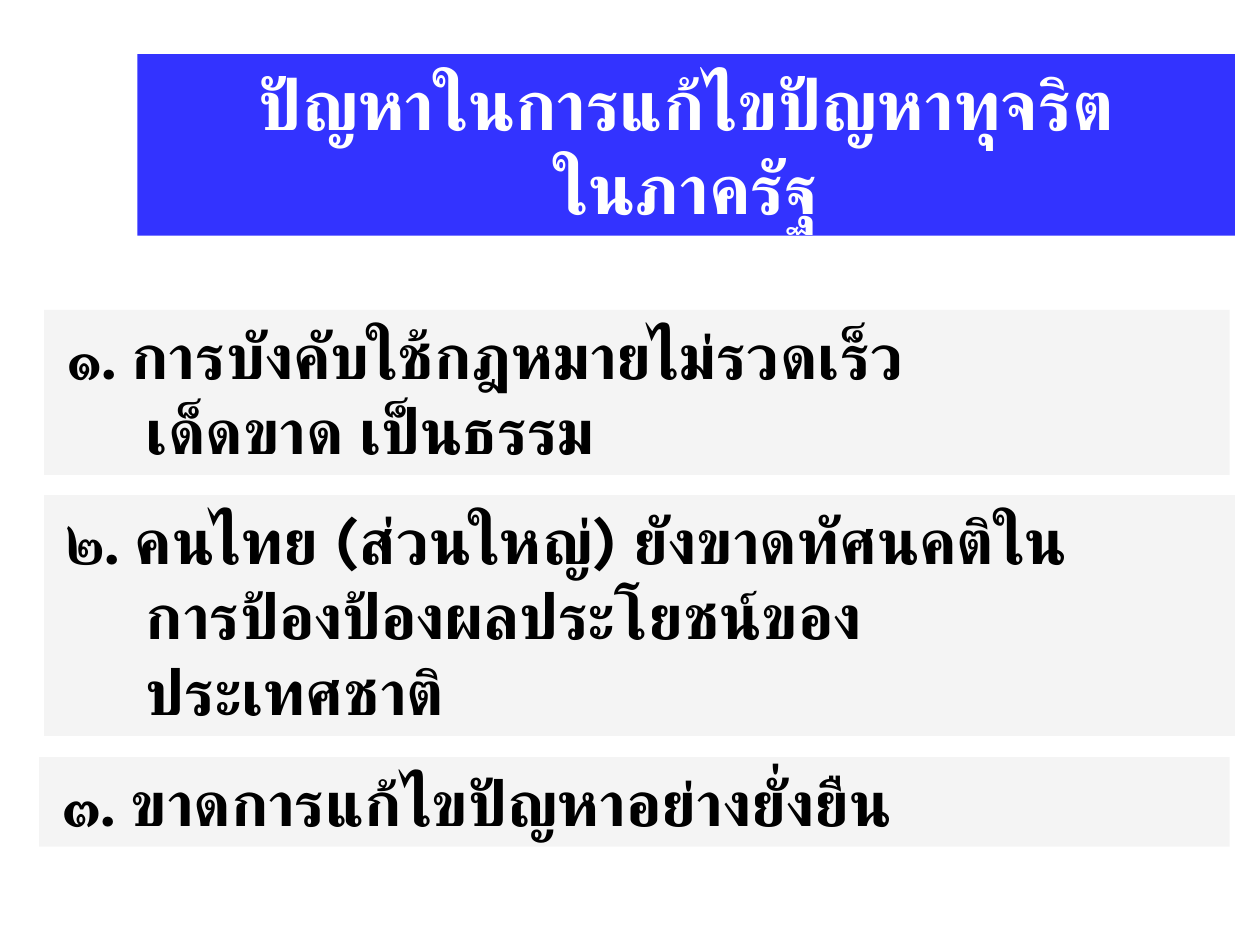
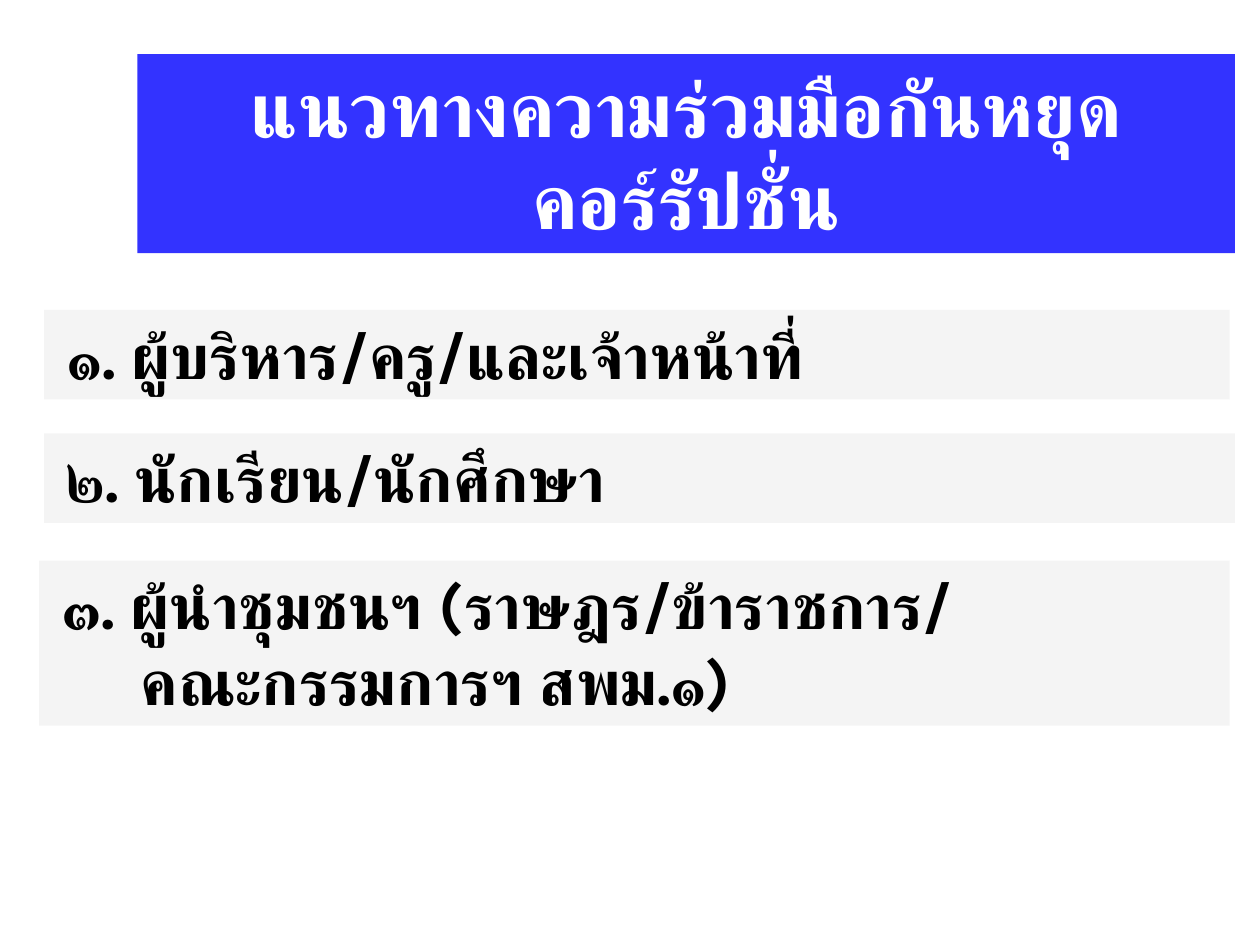
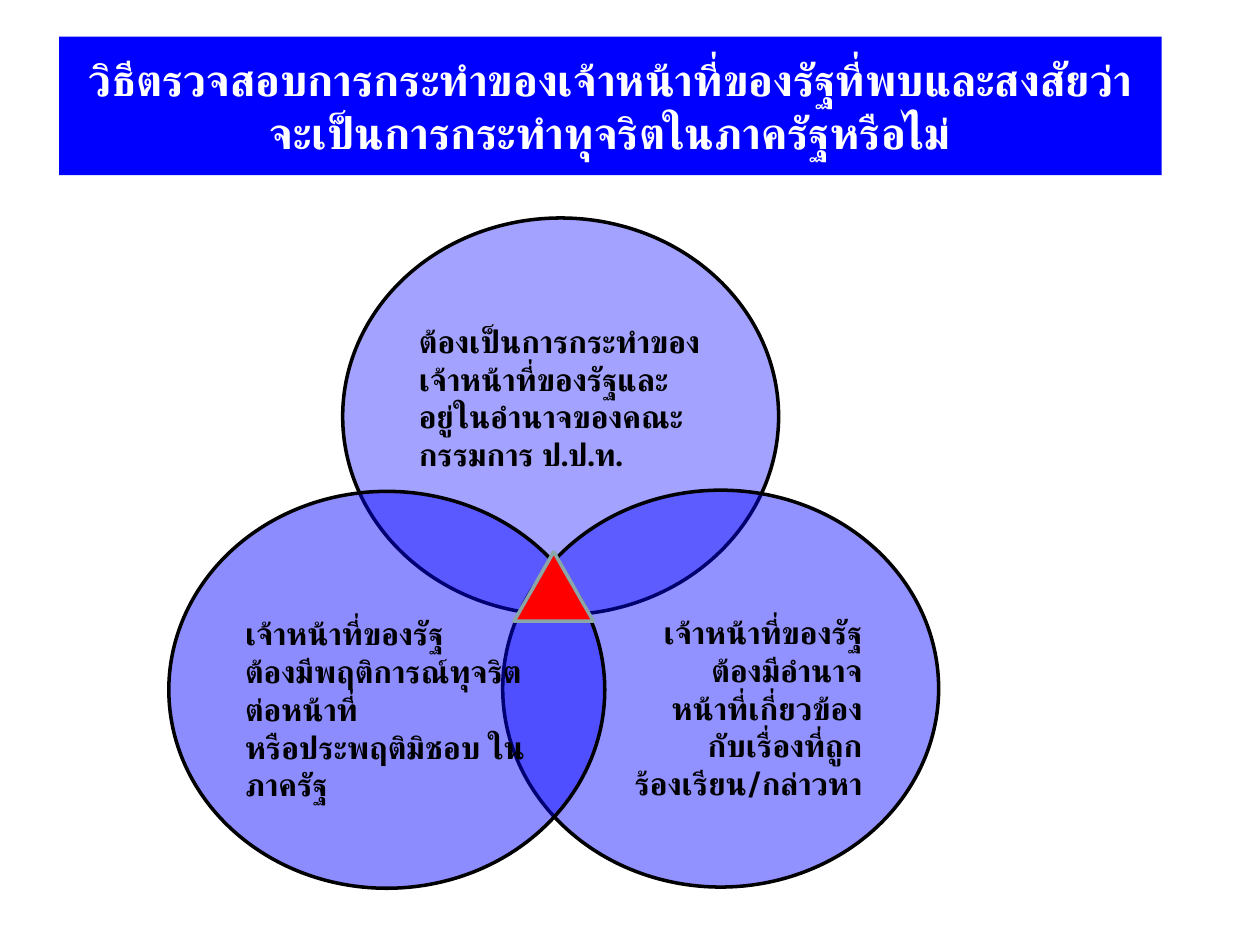
from lxml import etree
from pptx import Presentation
from pptx.dml.color import RGBColor
from pptx.enum.shapes import MSO_SHAPE
from pptx.enum.text import MSO_ANCHOR, MSO_AUTO_SIZE, PP_ALIGN
from pptx.oxml.ns import qn
from pptx.util import Inches, Pt

RECTANGLE, OVAL, TRIANGLE = MSO_SHAPE.RECTANGLE, MSO_SHAPE.OVAL, MSO_SHAPE.ISOSCELES_TRIANGLE
TOP, MIDDLE = MSO_ANCHOR.TOP, MSO_ANCHOR.MIDDLE
LEFT, CENTER, RIGHT = PP_ALIGN.LEFT, PP_ALIGN.CENTER, PP_ALIGN.RIGHT
GROW, FIXED = MSO_AUTO_SIZE.SHAPE_TO_FIT_TEXT, MSO_AUTO_SIZE.NONE

FONT = "Karla"
BLUE, PALE, RED, GREY = "0000FF", "F2F2F2", "FF0000", "8AA6A8"
WHITE, BLACK = "FFFFFF", "000000"
BAND_OPACITY = 80
BAND_LEFT, BAND_TOP, BAND_WIDTH = 1.09, 0.43, 8.71
ITEM_SIZE = 36
ITEM_COLUMNS = [(0.35, 9.41), (0.35, 9.45), (0.31, 9.45)]
FIRST_INDENT, NEXT_INDENT = 0.09, 0.71
CIRCLE_WIDTH, CIRCLE_HEIGHT, CIRCLE_SIZE = 3.46, 3.15, 18
INSET, CIRCLE_LINE = 0.05, 0.3

LIST_SLIDES = [
    {
        "title": ["ปัญหาในการแก้ไขปัญหาทุจริต", "ในภาครัฐ"],
        "size": 40,
        "items": [
            (2.46, ["๑. การบังคับใช้กฎหมายไม่รวดเร็ว", "เด็ดขาด เป็นธรรม"]),
            (3.93, ["๒. คนไทย (ส่วนใหญ่) ยังขาดทัศนคติใน",
                    "การป้องป้องผลประโยชน์ของ", "ประเทศชาติ"]),
            (6.01, ["๓. ขาดการแก้ไขปัญหาอย่างยั่งยืน"]),
        ],
    },
    {
        "title": ["แนวทางความร่วมมือกันหยุดคอร์รัปชั่น"],
        "size": 44,
        "items": [
            (2.46, ["๑. ผู้บริหาร/ครู/และเจ้าหน้าที่"]),
            (3.44, ["๒. นักเรียน/นักศึกษา"]),
            (4.45, ["๓. ผู้นำชุมชนฯ (ราษฎร/ข้าราชการ/", "คณะกรรมการฯ สพม.๑)"]),
        ],
    },
]

CHECK_TITLE = ["วิธีตรวจสอบการกระทำของเจ้าหน้าที่ของรัฐที่พบและสงสัยว่า"
               "จะเป็นการกระทำทุจริตในภาครัฐหรือไม่"]
CIRCLES = [
    {"corner": (2.72, 1.73), "opacity": 36, "align": LEFT, "lines_above": 0,
     "text": ["ต้องเป็นการกระทำของเจ้าหน้าที่ของรัฐและอยู่ในอำนาจของคณะกรรมการ ป.ป.ท."]},
    {"corner": (3.99, 3.89), "opacity": 43, "align": RIGHT, "lines_above": 2,
     "text": ["เจ้าหน้าที่ของรัฐ", "ต้องมีอำนาจ", "หน้าที่เกี่ยวข้อง",
              "กับเรื่องที่ถูก", "ร้องเรียน/กล่าวหา"]},
    {"corner": (1.34, 3.9), "opacity": 45, "align": LEFT, "lines_above": 2,
     "text": ["เจ้าหน้าที่ของรัฐ", "ต้องมีพฤติการณ์ทุจริตต่อหน้าที่",
              "หรือประพฤติมิชอบ ในภาครัฐ"]},
]


def color(value):
    return RGBColor.from_string(value)


def set_values(target, values):
    for name, value in values.items():
        setattr(target, name, value)


def add_figure(slide, kind, box, fill, opacity=100, line=None):
    shape = slide.shapes.add_shape(kind, *map(Inches, box))
    shape.shadow.inherit = False
    shape.fill.solid()
    shape.fill.fore_color.rgb = color(fill)
    if opacity < 100:
        fill_color = shape.fill._xPr.find(qn("a:solidFill"))[0]
        etree.SubElement(fill_color, qn("a:alpha"), val=str(opacity * 1000))
    if line:
        shape.line.color.rgb = color(line)
        shape.line.width = Pt(2)
    else:
        shape.line.fill.background()
    return shape


def write(shape, lines, size, ink, align, anchor, indents=None, frame_values=None):
    frame = shape.text_frame
    set_values(frame, {"word_wrap": True, "vertical_anchor": anchor, **(frame_values or {})})
    for index, line in enumerate(lines):
        paragraph = frame.paragraphs[0] if index == 0 else frame.add_paragraph()
        paragraph.alignment = align
        if indents:
            indent = indents[min(index, 1)]
            paragraph._p.get_or_add_pPr().set("marL", str(Inches(indent)))
        run = paragraph.add_run()
        run.text = line
        set_values(run.font, {"name": FONT, "size": Pt(size), "bold": True})
        run.font.color.rgb = color(ink)
        etree.SubElement(run._r.get_or_add_rPr(), qn("a:cs"), typeface=FONT)


def text_height(line_count, size):
    return round(0.11 + line_count * size / 60, 2)


def build_list_slide(slide, content):
    size = content["size"]
    band_box = (BAND_LEFT, BAND_TOP, BAND_WIDTH, text_height(2, size))
    band = add_figure(slide, RECTANGLE, band_box, BLUE, BAND_OPACITY)
    write(band, content["title"], size, WHITE, CENTER, TOP, frame_values={"auto_size": GROW})
    for (left, width), (top, lines) in zip(ITEM_COLUMNS, content["items"]):
        item_box = (left, top, width, text_height(len(lines), ITEM_SIZE))
        item = add_figure(slide, RECTANGLE, item_box, PALE, BAND_OPACITY)
        write(item, lines, ITEM_SIZE, BLACK, LEFT, TOP,
              (FIRST_INDENT, NEXT_INDENT), {"auto_size": GROW})


def build_check_slide(slide):
    band = add_figure(slide, RECTANGLE, (0.47, 0.29, 8.75, 1.1), BLUE)
    write(band, CHECK_TITLE, 25.2, WHITE, CENTER, MIDDLE)
    for circle in CIRCLES:
        box = (*circle["corner"], CIRCLE_WIDTH, CIRCLE_HEIGHT)
        shape = add_figure(slide, OVAL, box, BLUE, circle["opacity"], BLACK)
        shift = (circle["lines_above"] - 1) * CIRCLE_LINE
        margins = {"auto_size": FIXED,
                   "margin_top": Inches(INSET + max(shift, 0)),
                   "margin_bottom": Inches(INSET + max(-shift, 0))}
        write(shape, circle["text"], CIRCLE_SIZE, BLACK, circle["align"], MIDDLE,
              frame_values=margins)
    add_figure(slide, TRIANGLE, (4.08, 4.38, 0.63, 0.55), RED, line=GREY)


def main():
    presentation = Presentation()
    set_values(presentation, {"slide_width": Inches(10), "slide_height": Inches(7.5)})
    blank = presentation.slide_layouts[6]
    for content in LIST_SLIDES:
        build_list_slide(presentation.slides.add_slide(blank), content)
    build_check_slide(presentation.slides.add_slide(blank))
    presentation.save("out.pptx")


if __name__ == "__main__":
    main()
